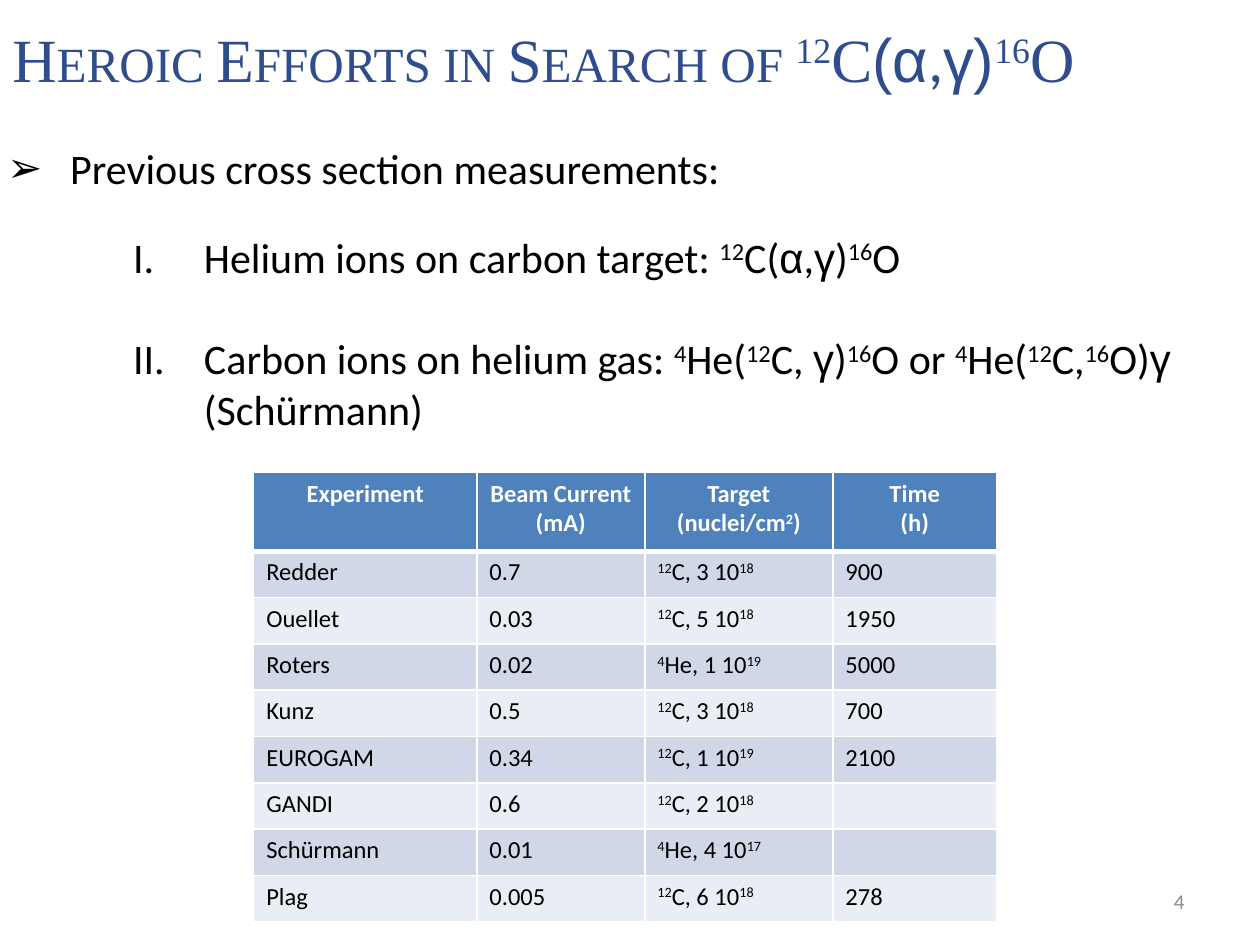
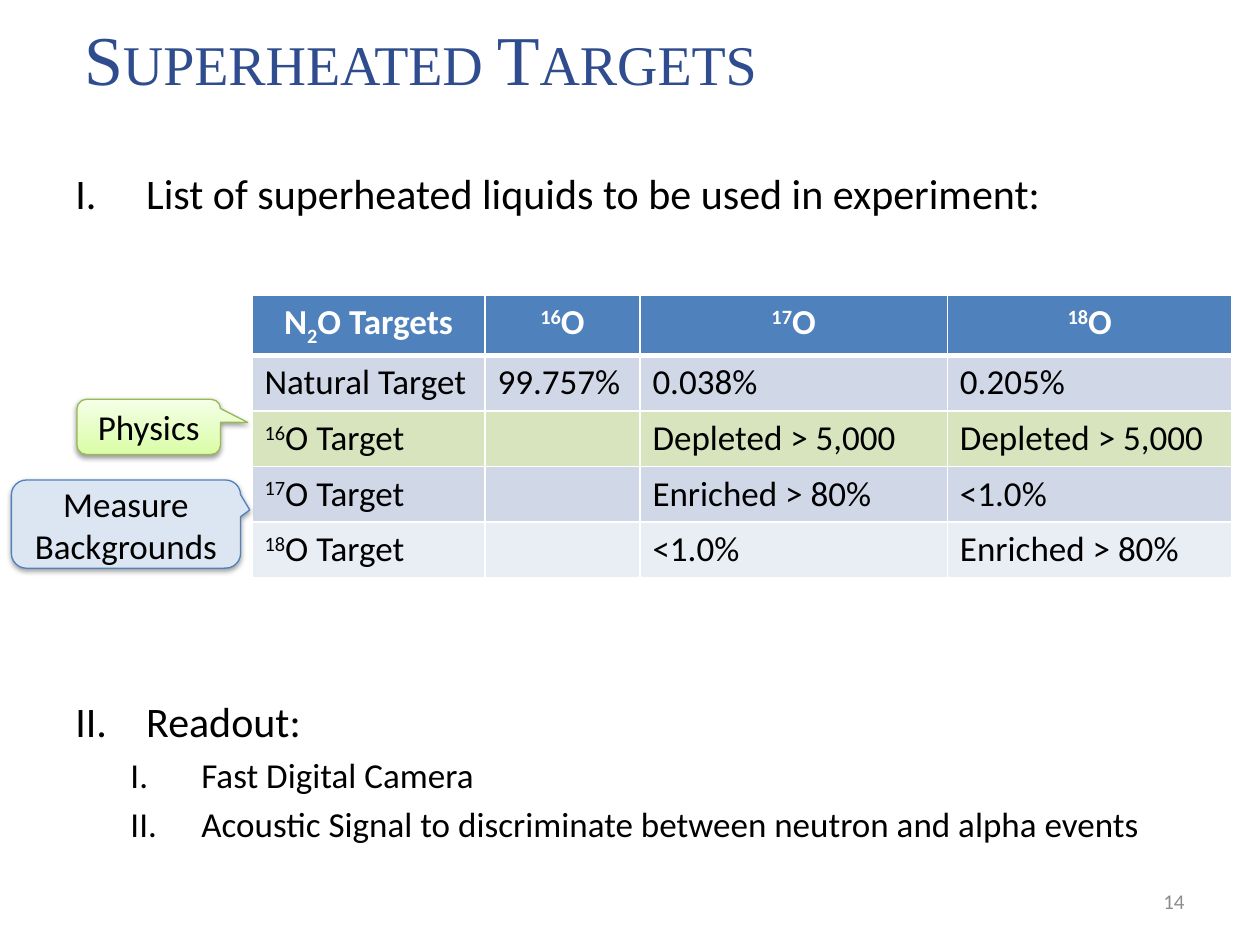
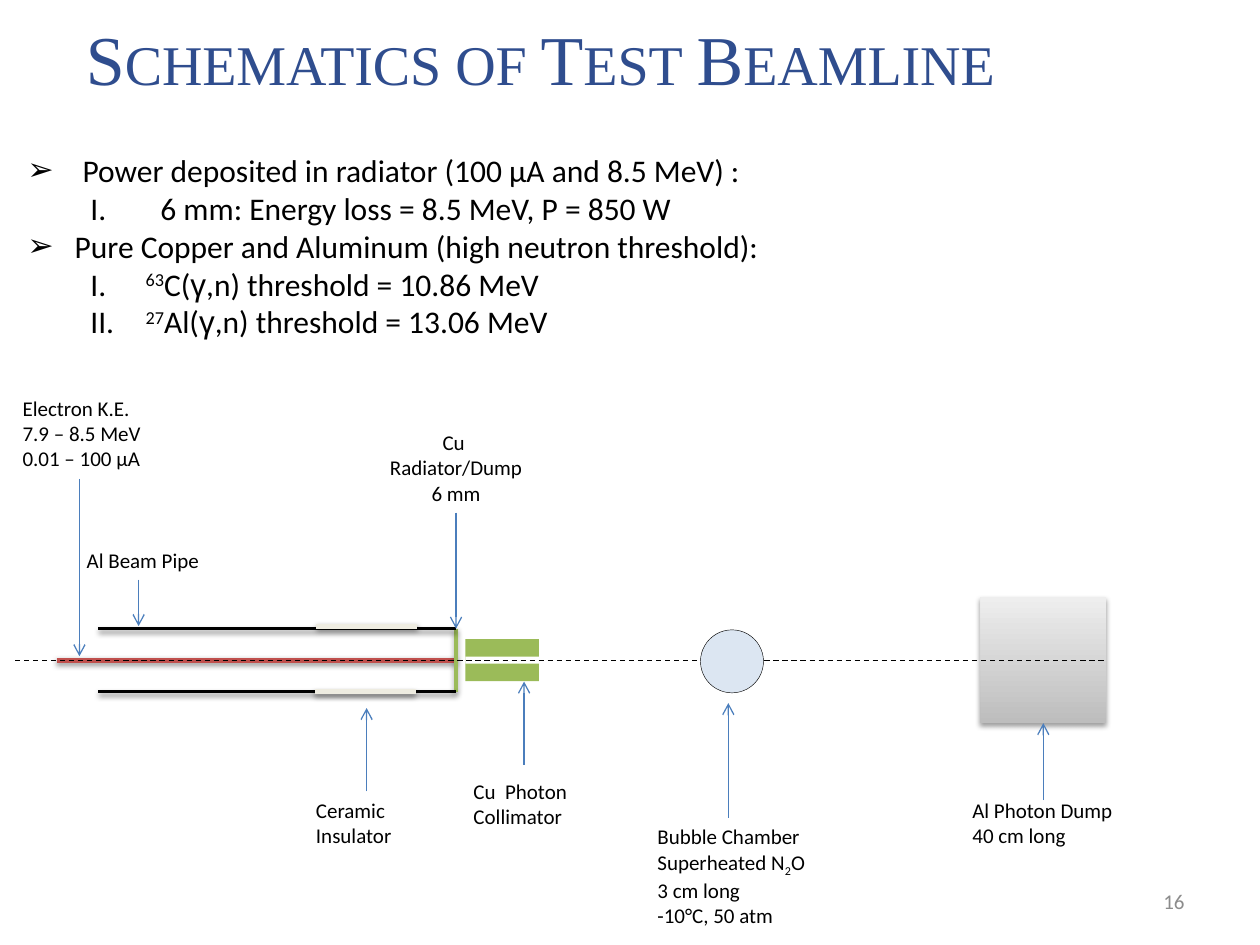
from dataclasses import dataclass
from pptx import Presentation
from pptx.dml.color import RGBColor
from pptx.enum.dml import MSO_LINE
from pptx.enum.shapes import MSO_CONNECTOR, MSO_SHAPE
from pptx.enum.text import MSO_ANCHOR, PP_ALIGN
from pptx.oxml.ns import qn
from pptx.oxml.xmlchemy import OxmlElement
from pptx.util import Pt
from lxml.etree import SubElement


@dataclass(frozen=True)
class Theme:
    # Colours
    black: str = "000000"
    white: str = "FFFFFF"
    title: str = "2F4D8E"
    grey: str = "8C8C8C"
    head: str = "4F81BD"
    bands: tuple = ("D0D8E8", "E9EDF4")
    mark: str = "D7E4BD"
    pale: str = "DCE6F2"
    arrow: str = "4B7EBC"
    green: str = "9BBB59"
    edge: str = "98B955"
    red: str = "C0504D"
    cream: str = "EEECE1"
    lime: tuple = ("DAFDA7", "F5FFE7")
    steel: tuple = ("BDBDBD", "EEEEEE")
    # Fonts and type sizes
    sans: str = "Calibri"
    serif: str = "Times New Roman"
    greek: str = "Arial"
    large: int = 40
    long: float = 35.1
    body: int = 24
    mid: int = 20
    list: int = 18
    cell: int = 14
    small: int = 12


look = Theme()
rgb = RGBColor.from_string


# "^" starts a superscript run, "_" a subscript run
def put(par, runs, size, color=look.black, face=look.sans, bold=False):
    for text in runs:
        shift = {"^": 30000, "_": -25000}.get(text[0], 0)
        run = par.add_run()
        run.text = text[1:] if shift else text
        font = run.font
        font.size, font.bold = Pt(size), bold
        font.color.rgb = rgb(color)
        font.name = face
        if set(text) & set("αγ"):
            font.name = look.greek
        elif text == ",":
            font.name = look.sans
        props = run._r.get_or_add_rPr()
        if shift:
            props.set("baseline", str(shift))
        elif font.name == look.serif and not text.isupper():
            props.set("cap", "small")


def box(slide, spot, lines, size, color=look.black, face=look.sans,
        align=PP_ALIGN.LEFT, anchor=MSO_ANCHOR.TOP):
    area = slide.shapes.add_textbox(*map(Pt, spot))
    frame = area.text_frame
    frame.word_wrap = True
    frame.vertical_anchor = anchor
    for row, runs in enumerate(lines):
        par = frame.add_paragraph() if row else frame.paragraphs[0]
        par.alignment = align
        put(par, runs, size, color, face)
    return area


deck = Presentation()
deck.slide_width, deck.slide_height = Pt(720), Pt(540)
shaded = []

# Titles and page numbers
heads = [
    (0, look.long, "4", ["Heroic Efforts in Search of ", "^12", "C", "(α", ",", "γ)", "^16", "O"]),
    (41, look.large, "14", ["Superheated Targets"]),
    (42, look.large, "16", ["Schematics of Test Beamline"]),
]
for left, size, page, runs in heads:
    slide = deck.slides.add_slide(deck.slide_layouts[6])
    box(slide, (left, 0, 717 - left, 66), [runs], size, look.title, look.serif,
        anchor=MSO_ANCHOR.MIDDLE)
    box(slide, (516, 500.4, 168, 28.8), [[page]], look.small, look.grey,
        align=PP_ALIGN.RIGHT, anchor=MSO_ANCHOR.MIDDLE)
past, fluid, line = deck.slides

# Lists: level, bullet (None numbers the item), margin, hang, space before, runs
lists = [
    (past, (-3, 77.8, 720, 174), look.body, [
        (0, "➢", 36, 36, 0, ["Previous cross section measurements:"]),
        (2, None, 112.5, 40.5, 22,
         ["Helium ions on carbon target: ", "^12", "C(", "α", ",", "γ", ")", "^16", "O"]),
        (2, None, 112.5, 40.5, 29.3,
         ["Carbon ions on helium gas: ", "^4", "He(", "^12", "C, ", "γ", ")", "^16", "O or ",
          "^4", "He(", "^12", "C,", "^16", "O)", "γ ", "(Schürmann)"]),
    ]),
    (fluid, (36, 92.2, 648, 447), look.body, [
        (0, None, 40.5, 40.5, 0, ["List of superheated liquids to be used in experiment:"]),
        (0, None, 40.5, 40.5, 273, ["Readout:"]),
        (1, None, 72, 40.5, 4, ["Fast Digital Camera"]),
        (1, None, 72, 40.5, 4,
         ["Acoustic Signal to discriminate between neutron and alpha events"]),
    ]),
    (line, (8.6, 82.8, 495, 116.6), look.list, [
        (0, "➢", 31.5, 31.5, 0, ["Power deposited in radiator (100 µA and 8.5 MeV) :"]),
        (1, None, 76, 40, 0, ["6 mm: Energy loss = 8.5 MeV, P = 850 W"]),
        (0, "➢", 27, 27, 0, ["Pure Copper and Aluminum (high neutron threshold):"]),
        (1, None, 67.5, 31.5, 0, ["^63", "C(", "γ", ",n) threshold = 10.86 MeV"]),
        (1, None, 67.5, 31.5, 0, ["^27", "Al(", "γ", ",n) threshold = 13.06 MeV"]),
    ]),
]
for slide, spot, size, items in lists:
    area = box(slide, spot, [item[-1] for item in items], size)
    for par, item in zip(area.text_frame.paragraphs, items):
        level, mark, margin, hang, before, runs = item
        par.level = level
        par.space_before = Pt(before)
        if slide is fluid and level:
            for run in par.runs:
                run.font.size = Pt(look.mid)
        props = par._p.get_or_add_pPr()
        props.set("marL", str(Pt(margin)))
        props.set("indent", str(-Pt(hang)))
        if mark:
            SubElement(props, qn("a:buFont")).set("typeface", look.greek)
            SubElement(props, qn("a:buChar")).set("char", mark)
        else:
            SubElement(props, qn("a:buAutoNum")).set("type", "romanUcPeriod")

# Tables: a cell is a list of lines, a line is a list of runs
trials = [
    ("Redder", "0.7", "12", "C, 3 10", "18", "900"),
    ("Ouellet", "0.03", "12", "C, 5 10", "18", "1950"),
    ("Roters", "0.02", "4", "He, 1 10", "19", "5000"),
    ("Kunz", "0.5", "12", "C, 3 10", "18", "700"),
    ("EUROGAM", "0.34", "12", "C, 1 10", "19", "2100"),
    ("GANDI", "0.6", "12", "C, 2 10", "18", ""),
    ("Schürmann", "0.01", "4", "He, 4 10", "17", ""),
    ("Plag", "0.005", "12", "C, 6 10", "18", "278"),
]
tests = [[[["Experiment"]], [["Beam Current (mA)"]],
          [["Target"], ["(nuclei/cm", "^2", ")"]], [["Time"], ["(h)"]]]]
for name, beam, mass, dose, power, time in trials:
    tests.append([[[name]], [[beam]], [["^" + mass, dose, "^" + power]],
                  [[time]] if time else [[]]])
mixes = [
    [[["N", "_2", "O Targets"]]] + [[["^" + mass, "O"]] for mass in ("16", "17", "18")],
    [[[text]] for text in ("Natural Target", "99.757%", "0.038%", "0.205%")],
]
for mass, mid, last in [("16", "Depleted > 5,000", "Depleted > 5,000"),
                        ("17", "Enriched > 80%", "<1.0%"),
                        ("18", "<1.0%", "Enriched > 80%")]:
    mixes.append([[["^" + mass, "O Target"]], [[]], [[mid]], [[last]]])

grids = [
    (past, 145, 270, (127.5, 96, 107.5, 93.5), 45, 26.5, look.cell, tests, None),
    (fluid, 144, 168.5, (133.2, 88.5, 175.7, 162.7), 34, 31.8, look.mid, mixes, 2),
]
for slide, left, top, cols, first, high, size, rows, mark in grids:
    tall = first + high * (len(rows) - 1)
    grid = slide.shapes.add_table(len(rows), len(cols), Pt(left), Pt(top),
                                  Pt(sum(cols)), Pt(tall)).table
    for col, wide in enumerate(cols):
        grid.columns[col].width = Pt(wide)
    for row, cells in enumerate(rows):
        grid.rows[row].height = Pt(high if row else first)
        fill = look.bands[(row + 1) % 2] if row else look.head
        if row == mark:
            fill = look.mark
        for col, lines in enumerate(cells):
            cell = grid.cell(row, col)
            cell.fill.solid()
            cell.fill.fore_color.rgb = rgb(fill)
            # Thick rule under the header
            if not row:
                rule = OxmlElement("a:lnB")
                rule.set("w", str(Pt(3)))
                ink = SubElement(rule, qn("a:solidFill"))
                SubElement(ink, qn("a:srgbClr")).set("val", look.white)
                cell._tc.get_or_add_tcPr().insert(0, rule)
            frame = cell.text_frame
            for num, text in enumerate(lines):
                par = frame.add_paragraph() if num else frame.paragraphs[0]
                par.alignment = PP_ALIGN.LEFT if row else PP_ALIGN.CENTER
                put(par, text, size, look.black if row else look.white, bold=not row)
                if not text:
                    SubElement(par._p, qn("a:endParaRPr")).set("sz", str(size * 100))

# Solid shapes: slide, preset, place, fill, outline, shadow
call = MSO_SHAPE.ROUNDED_RECTANGULAR_CALLOUT
rect = MSO_SHAPE.RECTANGLE
axis = 377.25
solids = {
    "physics": (fluid, call, (44, 228.2, 82, 31.5), look.lime, look.edge, True),
    "back": (fluid, call, (6.5, 274.3, 131, 50.4), look.pale, look.head, True),
    "dump": (line, rect, (560.2, axis - 36, 72, 72), look.steel, None, True),
    "copper": (line, rect, (266, axis - 12, 42, 24), look.green, None, False),
    "gap": (line, rect, (266, axis - 2, 42, 4), look.white, None, False),
    "chamber": (line, MSO_SHAPE.OVAL, (400.3, axis - 17.3, 36, 36), look.pale, look.black, False),
}
parts = {}
for name, (slide, kind, spot, fill, edge, shade) in solids.items():
    part = parts[name] = slide.shapes.add_shape(kind, *map(Pt, spot))
    if isinstance(fill, tuple):
        part.fill.gradient()
        part.fill.gradient_angle = 90
        for place, (stop, color) in enumerate(zip(part.fill.gradient_stops, fill)):
            stop.color.rgb = rgb(color)
            stop.position = place
    else:
        part.fill.solid()
        part.fill.fore_color.rgb = rgb(fill)
    if edge:
        part.line.color.rgb = rgb(edge)
        part.line.width = Pt(0.25 if name == "chamber" else 0.75)
    else:
        part.line.fill.background()
    if shade:
        shaded.append(part)

# Callout words and tips
for name, tip, lines in [("physics", (0.69, -0.08, 0.17), ["Physics"]),
                         ("back", (0.54, -0.16, 0.17), ["Measure", "Backgrounds"])]:
    part = parts[name]
    for num, value in enumerate(tip):
        part.adjustments[num] = value
    frame = part.text_frame
    frame.vertical_anchor = MSO_ANCHOR.MIDDLE
    for row, text in enumerate(lines):
        par = frame.add_paragraph() if row else frame.paragraphs[0]
        par.alignment = PP_ALIGN.CENTER
        put(par, [text], look.mid)

# Beamline labels
labels = {
    "beam": ((5.8, 222.5, 87, 51), [["Electron K.E."], ["7.9 – 8.5 MeV"], ["0.01 – 100 µA"]]),
    "pipe": ((42.5, 309.6, 83, 21.6), [["Al Beam Pipe"]]),
    "plate": ((213.1, 242, 95, 51), [["Cu "], ["Radiator/Dump"], ["6 mm"]]),
    "copper": ((263.5, 441.4, 72, 36), [["Cu  Photon"], ["Collimator"]]),
    "ring": ((173.5, 452.2, 72, 36), [["Ceramic"], ["Insulator"]]),
    "bubble": ((368.6, 467.3, 104, 65.5),
               [["Bubble Chamber"], ["Superheated N", "_2", "O"], ["3 cm long"], ["-10°C, 50 atm"]]),
    "block": ((548.6, 452.2, 100, 36), [["Al Photon Dump"], ["40 cm long"]]),
}
notes = {}
for name, (spot, lines) in labels.items():
    side = PP_ALIGN.CENTER if name == "plate" else PP_ALIGN.LEFT
    notes[name] = box(line, spot, lines, look.small, align=side)

# Beamline wires: ends, colour, width, kind
end = 260.6
roof, floor = axis - 18, axis + 18
wires = {
    "beam": (32.4, axis, end, axis, look.red, 3, "shade"),
    "plate": (end, roof, end, floor, look.green, 2, "shade"),
    "axis": (8.6, axis, 632.2, axis, look.black, 0.75, "dash"),
    "roof": (56.2, roof, end, roof, look.black, 2, "shade"),
    "floor": (56.2, floor, end, floor, look.black, 2, "shade"),
    "low ring": (180, floor, 237.6, floor, look.cream, 3, "shade"),
    "top ring": (180.7, roof - 1.4, 238.3, roof - 1.4, look.cream, 3, "shade"),
}
tips = {
    "to beam": (45.4, 273.6, 375),
    "to pipe": (79.2, 331.2, 357.8),
    "to plate": (end, 293, roof),
    "to ring": (209.5, 452.2, 404.6),
    "to copper": (299.5, 437, 389.5),
    "to bubble": (416.2, 467.3, 401.8),
    "to dump": (596.2, 457.2, 413.3),
}
for name, (x, start, stop) in tips.items():
    wires[name] = (x, start, x, stop, look.arrow, 0.75, "arrow")
for name, (*ends, color, width, kind) in wires.items():
    wire = line.shapes.add_connector(MSO_CONNECTOR.STRAIGHT, *map(Pt, ends))
    wire.line.color.rgb = rgb(color)
    wire.line.width = Pt(width)
    if kind == "dash":
        wire.line.dash_style = MSO_LINE.DASH
    elif kind == "arrow":
        stroke = wire._element.spPr.find(qn("a:ln"))
        SubElement(stroke, qn("a:tailEnd")).set("type", "arrow")
    else:
        shaded.append(wire)
    parts[name] = wire
parts["axis"].end_connect(parts["dump"], 3)
parts["to dump"].end_connect(parts["dump"], 2)
parts["to plate"].begin_connect(notes["plate"], 2)
parts["to ring"].begin_connect(notes["ring"], 0)

# The chamber stands in front of the axis
line.shapes._spTree.append(parts["chamber"]._element)

# Shadows: soft where listed, none elsewhere
for part in parts.values():
    effect = OxmlElement("a:effectLst")
    part._element.spPr.append(effect)
    if part in shaded:
        soft = SubElement(effect, qn("a:outerShdw"), blurRad=str(Pt(3.1)),
                          dist=str(Pt(1.6)), dir="5400000", rotWithShape="0")
        tone = SubElement(soft, qn("a:srgbClr"), val=look.black)
        SubElement(tone, qn("a:alpha"), val="38000")

deck.save("out.pptx")
